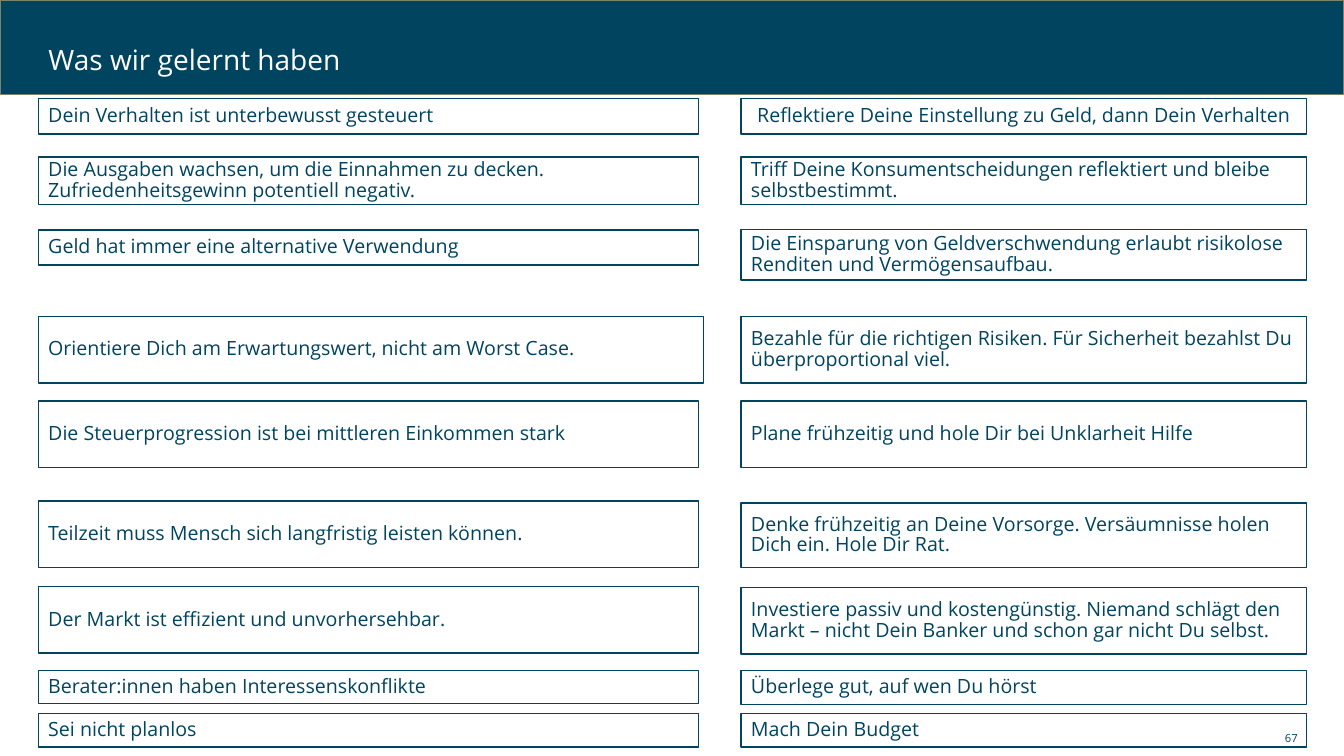
from pptx import Presentation
from pptx.dml.color import RGBColor
from pptx.enum.shapes import MSO_SHAPE
from pptx.enum.text import MSO_ANCHOR, PP_ALIGN
from pptx.util import Inches, Pt

PETROL = RGBColor(0x00, 0x44, 0x60)
OLIVE = RGBColor(0x7A, 0x86, 0x6C)
WHITE = RGBColor(0xFF, 0xFF, 0xFF)
FONT = "Open Sans"

LEFT_X, LEFT_W = 0.38, 6.55
RIGHT_X, RIGHT_W = 7.35, 5.61

# Each entry: top, height, text
INSIGHTS = [
    (0.98, 0.35, "Dein Verhalten ist unterbewusst gesteuert"),
    (1.56, 0.47, "Die Ausgaben wachsen, um die Einnahmen zu decken. "
                 "Zufriedenheitsgewinn potentiell negativ."),
    (2.28, 0.35, "Geld hat immer eine alternative Verwendung"),
    (3.14, 0.66, "Orientiere Dich am Erwartungswert, nicht am Worst Case."),
    (3.98, 0.66, "Die Steuerprogression ist bei mittleren Einkommen stark"),
    (4.97, 0.66, "Teilzeit muss Mensch sich langfristig leisten können."),
    (5.82, 0.66, "Der Markt ist effizient und unvorhersehbar."),
    (6.65, 0.33, "Berater:innen haben Interessenskonflikte"),
    (7.08, 0.33, "Sei nicht planlos"),
]
ADVICE = [
    (0.98, 0.35, "Reflektiere Deine Einstellung zu Geld, dann Dein Verhalten"),
    (1.56, 0.47, "Triff Deine Konsumentscheidungen reflektiert und bleibe "
                 "selbstbestimmt."),
    (2.28, 0.50, "Die Einsparung von Geldverschwendung erlaubt risikolose "
                 "Renditen und Vermögensaufbau."),
    (3.14, 0.66, "Bezahle für die richtigen Risiken. Für Sicherheit bezahlst "
                 "Du überproportional viel."),
    (3.98, 0.66, "Plane frühzeitig und hole Dir bei Unklarheit Hilfe"),
    (4.99, 0.64, "Denke frühzeitig an Deine Vorsorge. Versäumnisse holen "
                 "Dich ein. Hole Dir Rat."),
    (5.83, 0.66, "Investiere passiv und kostengünstig. Niemand schlägt den "
                 "Markt – nicht Dein Banker und schon gar nicht Du selbst."),
    (6.65, 0.34, "Überlege gut, auf wen Du hörst"),
    (7.08, 0.33, "Mach Dein Budget"),
]


def write(sp, text, size=14, color=PETROL, align=PP_ALIGN.LEFT, spacing=0.88):
    tf = sp.text_frame
    tf.word_wrap = True
    tf.vertical_anchor = MSO_ANCHOR.MIDDLE
    p = tf.paragraphs[0]
    p.alignment = align
    p.line_spacing = spacing
    r = p.add_run()
    r.text = text
    r.font.name = FONT
    r.font.size = Pt(size)
    r.font.color.rgb = color


def add_rect(slide, x, y, w, h, line, fill=None):
    sp = slide.shapes.add_shape(
        MSO_SHAPE.RECTANGLE, Inches(x), Inches(y), Inches(w), Inches(h))
    sp.shadow.inherit = False
    if fill is None:
        sp.fill.background()
    else:
        sp.fill.solid()
        sp.fill.fore_color.rgb = fill
    sp.line.color.rgb = line
    sp.line.width = Pt(1)
    return sp


def add_header(slide, x, y, w, h, text):
    band = add_rect(slide, x, y, w, h, OLIVE, PETROL)
    title = slide.shapes.title
    band._element.addnext(title._element)  # title in front of the band
    title.left, title.top = Inches(x + 0.38), Inches(y + 0.34)
    title.width, title.height = Inches(11.02), Inches(0.54)
    write(title, text, size=20, color=WHITE, spacing=0.9)


def add_column(slide, x, w, entries, first_align=PP_ALIGN.LEFT, wider=None):
    """Stack outlined statements; wider maps a row index to its own width."""
    for i, (y, h, text) in enumerate(entries):
        sp = add_rect(slide, x, y, (wider or {}).get(i, w), h, PETROL)
        write(sp, text, align=PP_ALIGN.LEFT if i else first_align)


def add_page_number(slide, x, y, w, h, number):
    sp = slide.shapes.add_textbox(Inches(x), Inches(y), Inches(w), Inches(h))
    write(sp, number, size=8, align=PP_ALIGN.RIGHT, spacing=1.0)


def main():
    prs = Presentation()
    prs.slide_width, prs.slide_height = Inches(13.33), Inches(7.5)
    slide = prs.slides.add_slide(prs.slide_layouts[5])
    add_header(slide, 0, 0, 13.33, 0.94, "Was wir gelernt haben")
    add_column(slide, LEFT_X, LEFT_W, INSIGHTS, wider={3: 6.6})
    add_column(slide, RIGHT_X, RIGHT_W, ADVICE, first_align=PP_ALIGN.CENTER)
    add_page_number(slide, 9.42, 7.2, 3.55, 0.24, "67")
    prs.save("out.pptx")


if __name__ == "__main__":
    main()
